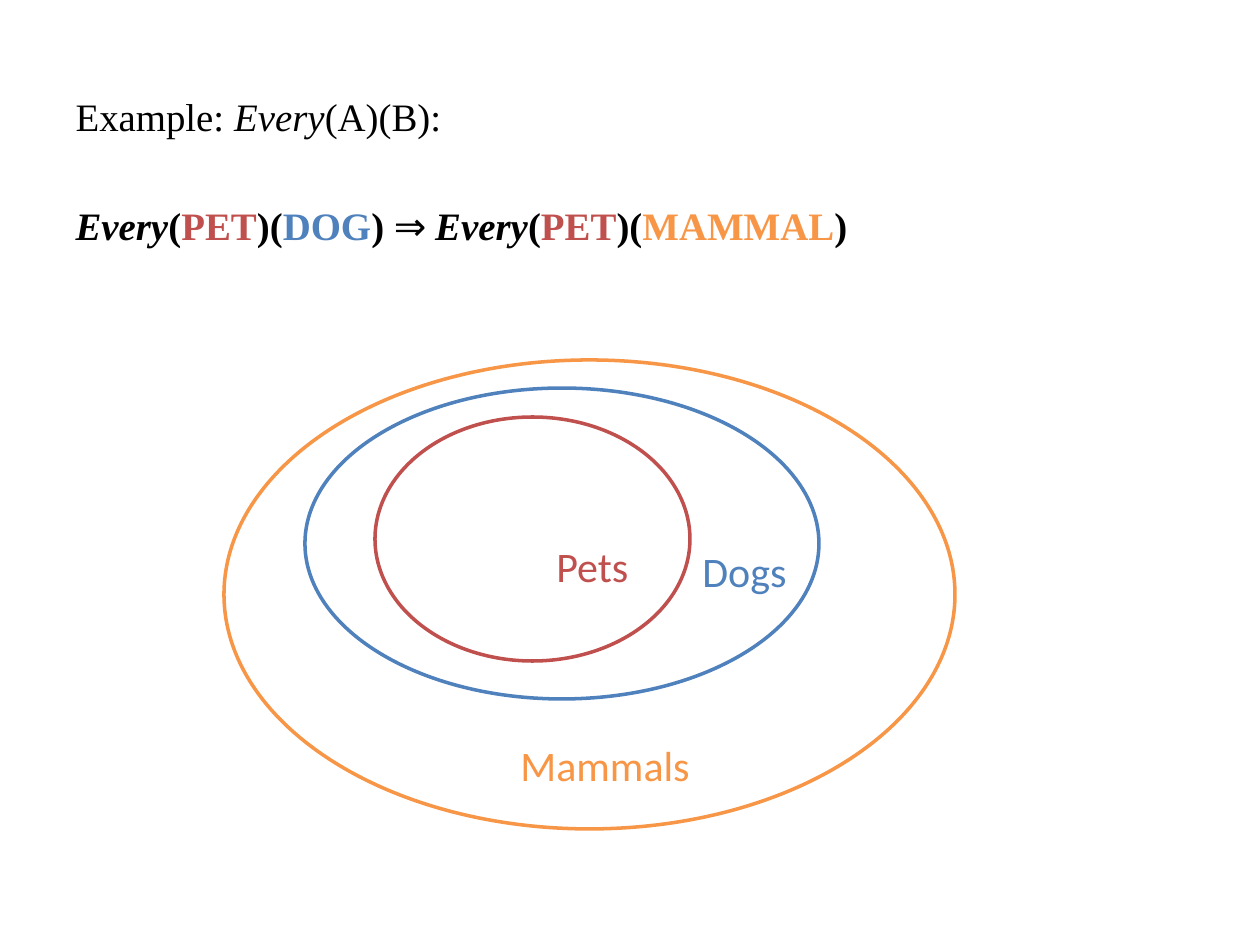
from dataclasses import dataclass

from pptx import Presentation
from pptx.dml.color import RGBColor as RGB
from pptx.enum.shapes import MSO_SHAPE as SHAPE
from pptx.enum.text import MSO_ANCHOR as ANCHOR, MSO_AUTO_SIZE as AUTO
from pptx.oxml.ns import qn
from pptx.util import Emu, Pt

PX = 914400 / 126  # EMU in one px


@dataclass(frozen=True)
class Theme:
    ink: RGB = RGB(0x00, 0x00, 0x00)
    pet: RGB = RGB(0xC0, 0x50, 0x4D)
    dog: RGB = RGB(0x4F, 0x81, 0xBD)
    mammal: RGB = RGB(0xF7, 0x96, 0x46)
    serif: str = "Times New Roman"
    sans: str = "Calibri"
    body: float = 22.2
    label: float = 24
    line: float = 2


T = Theme()


def px(*lengths):
    return [Emu(round(n * PX)) for n in lengths]


def add_run(p, text, size, font, color, bold=False, italic=False):
    r = p.add_run()
    r.text = text
    f = r.font
    f.size, f.name, f.bold, f.italic = Pt(size), font, bold, italic
    f.color.rgb = color


def fill_body(sp, box, lines):
    """Write unbulleted lines: (space before, runs of text, colour, bold, italic, font)."""
    sp.left, sp.top, sp.width, sp.height = px(*box)
    tf = sp.text_frame
    tf.auto_size = AUTO.NONE
    tf.vertical_anchor = ANCHOR.TOP
    for i, (gap, runs) in enumerate(lines):
        p = tf.paragraphs[0] if i == 0 else tf.add_paragraph()
        p.space_before = Pt(gap)
        pPr = p._p.get_or_add_pPr()
        pPr.set("marL", "0")
        pPr.set("indent", "0")
        pPr.append(pPr.makeelement(qn("a:buNone"), {}))
        for text, color, bold, italic, font in runs:
            add_run(p, text, T.body, font, color, bold, italic)


def every(a, b):
    """Runs for Every(A)(B), each set name in its own colour."""
    parts = [("Every", T.ink, True), ("(", T.ink, False), (*a, False),
             (")(", T.ink, False), (*b, False), (")", T.ink, False)]
    return [(text, color, True, italic, T.serif) for text, color, italic in parts]


def add_ring(shapes, box, color):
    sp = shapes.add_shape(SHAPE.OVAL, *px(*box))
    sp.shadow.inherit = False
    sp.fill.background()
    sp.line.color.rgb = color
    sp.line.width = Pt(T.line)


def add_label(shapes, box, text, color):
    tf = shapes.add_textbox(*px(*box)).text_frame
    tf.word_wrap = True
    add_run(tf.paragraphs[0], text, T.label, T.sans, color)


def add_venn(shapes, box, sets):
    """Nested sets, placed relative to the box; rings first, then labels."""
    x, y = box[:2]

    def place(dx, dy, w, h):
        return x + dx, y + dy, w, h

    for _, color, ring, _ in sets:
        add_ring(shapes, place(*ring), color)
    for name, color, _, label in sets:
        add_label(shapes, place(*label), name, color)


def main():
    prs = Presentation()
    prs.slide_width, prs.slide_height = px(1260, 945)
    s = prs.slides.add_slide(prs.slide_layouts[1])
    title = s.shapes.title
    title._element.getparent().remove(title._element)

    # Statement of the inference
    pet, dog, mammal = ("PET", T.pet), ("DOG", T.dog), ("MAMMAL", T.mammal)
    example = [("Example: ", T.ink, False, False, T.serif),
               ("Every", T.ink, False, True, T.serif),
               ("(A)(B):", T.ink, False, False, T.serif)]
    arrow = [(" ", T.ink, True, False, T.serif), ("⇒ ", T.ink, False, False, T.sans)]
    fill_body(s.placeholders[1], (63, 86, 1071, 334), [
        (3, example),
        (36, every(pet, dog) + arrow + every(pet, mammal)),
    ])

    # Diagram of the three sets
    add_venn(s.shapes, (224, 360, 731, 469), [
        ("Mammals", T.mammal, (0, 0, 731, 469), (284, 373, 273, 63)),
        ("Dogs", T.dog, (81, 28, 514, 311), (466, 179, 136, 63)),
        ("Pets", T.pet, (151, 57, 315, 244), (320, 174, 136, 63)),
    ])
    prs.save("out.pptx")


if __name__ == "__main__":
    main()
